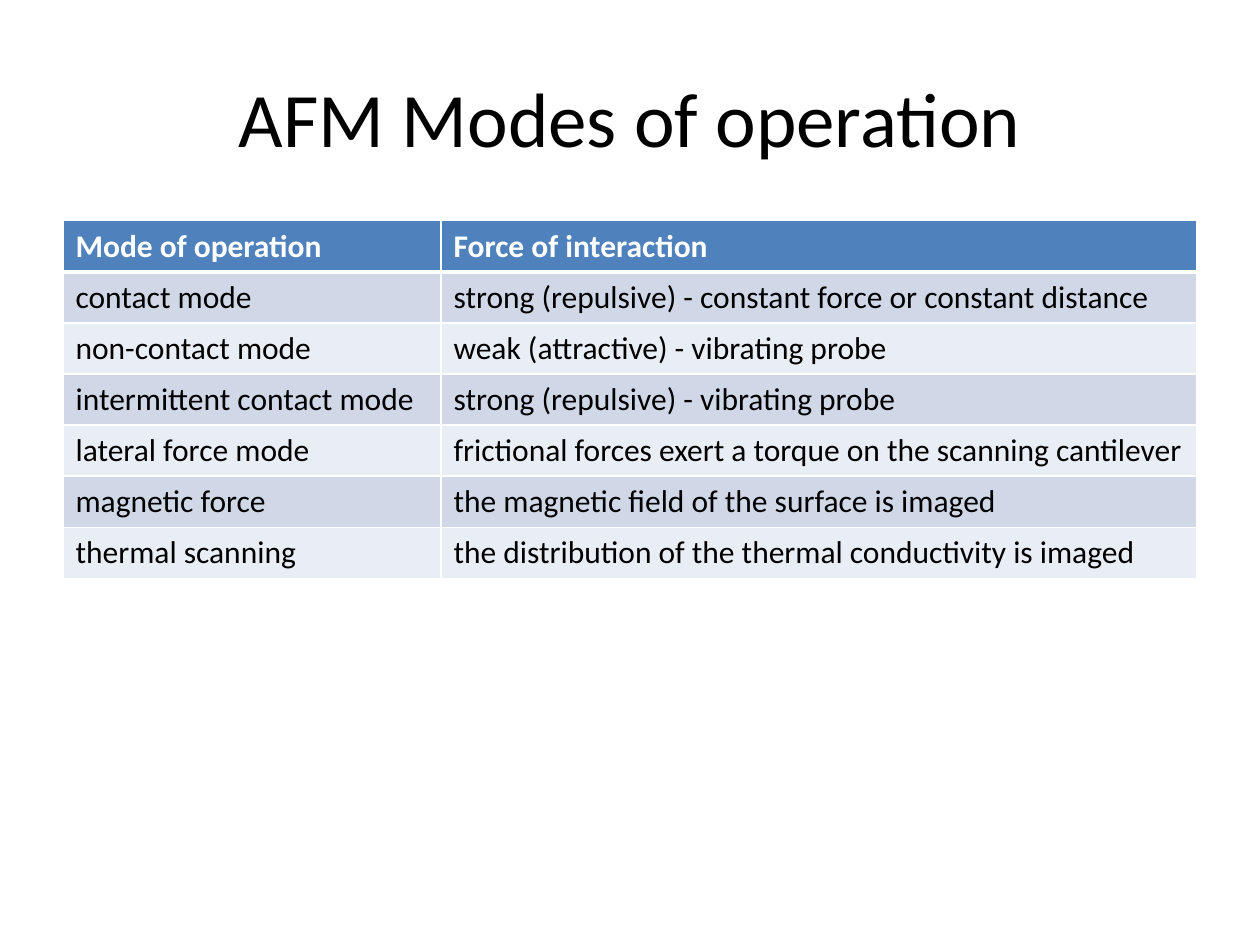
"""Build the slide that lists the AFM modes of operation in a table."""
from lxml import etree
from pptx import Presentation
from pptx import util as u
from pptx.dml.color import RGBColor
from pptx.enum import text
from pptx.oxml import ns

BLACK = RGBColor(0x00, 0x00, 0x00)
WHITE = RGBColor(0xFF, 0xFF, 0xFF)
HEADER_BLUE = RGBColor(0x4F, 0x81, 0xBD)
BANDS = (RGBColor(0xE9, 0xED, 0xF4), RGBColor(0xD0, 0xD8, 0xE8))

LEFT, WIDTH = u.Cm(1.27), u.Cm(22.86)
ROW_HEIGHT = u.Cm(1.03)
MODE_WIDTH, FORCE_WIDTH = u.Cm(7.62), u.Cm(15.24)

MODES = (
    ("Mode of operation", "Force of interaction"),
    ("contact mode", "strong (repulsive) - constant force or constant distance"),
    ("non-contact mode", "weak (attractive) - vibrating probe"),
    ("intermittent contact mode", "strong (repulsive) - vibrating probe"),
    ("lateral force mode", "frictional forces exert a torque on the scanning cantilever"),
    ("magnetic force", "the magnetic field of the surface is imaged"),
    ("thermal scanning", "the distribution of the thermal conductivity is imaged"),
)


def write(frame, words, color, **font_values):
    """Put words in a text frame and format them."""
    paragraph = frame.paragraphs[0]
    run = paragraph.add_run()
    run.text = words
    run.font.color.rgb = color
    for name, value in {"name": "Calibri", **font_values}.items():
        setattr(run.font, name, value)
    return paragraph


def add_title(slide, words):
    """Place and fill the title placeholder."""
    title = slide.shapes.title
    place = {"left": LEFT, "top": u.Cm(0.76), "width": WIDTH, "height": u.Cm(3.18)}
    for name, value in place.items():
        setattr(title, name, value)
    title.text_frame.vertical_anchor = text.MSO_ANCHOR.MIDDLE
    paragraph = write(title.text_frame, words, BLACK, size=u.Pt(44))
    paragraph.alignment = text.PP_ALIGN.CENTER


def add_borders(cell, widths):
    """Draw white cell borders with a width in points for each side."""
    properties = cell._tc.get_or_add_tcPr()
    for side, width in widths.items():
        line = etree.SubElement(properties, ns.qn(f"a:ln{side}"), w=str(u.Pt(width)))
        fill = etree.SubElement(line, ns.qn("a:solidFill"))
        etree.SubElement(fill, ns.qn("a:srgbClr"), val=str(WHITE))


def format_cell(cell, words, row):
    """Fill one table cell as header or as part of a band."""
    header = row == 0
    add_borders(cell, {"L": 1, "R": 1, "T": 3 if row == 1 else 1, "B": 3 if header else 1})
    cell.fill.solid()
    cell.fill.fore_color.rgb = HEADER_BLUE if header else BANDS[row % 2]
    write(cell.text_frame, words, WHITE if header else BLACK, size=u.Pt(18), bold=header)


def add_modes_table(slide):
    """Add the table of modes and forces."""
    frame = slide.shapes.add_table(
        len(MODES), 2, LEFT, u.Cm(4.45), WIDTH, ROW_HEIGHT * len(MODES))
    modes = frame.table
    for column, width in zip(modes.columns, (MODE_WIDTH, FORCE_WIDTH)):
        column.width = width
    for row, entries in enumerate(MODES):
        modes.rows[row].height = ROW_HEIGHT
        for column, words in enumerate(entries):
            format_cell(modes.cell(row, column), words, row)


def main():
    """Build and save the slide."""
    deck = Presentation()
    deck.slide_width, deck.slide_height = u.Cm(25.4), u.Cm(19.05)
    slide = deck.slides.add_slide(deck.slide_layouts[5])
    add_title(slide, "AFM Modes of operation")
    add_modes_table(slide)
    deck.save("out.pptx")


if __name__ == "__main__":
    main()
